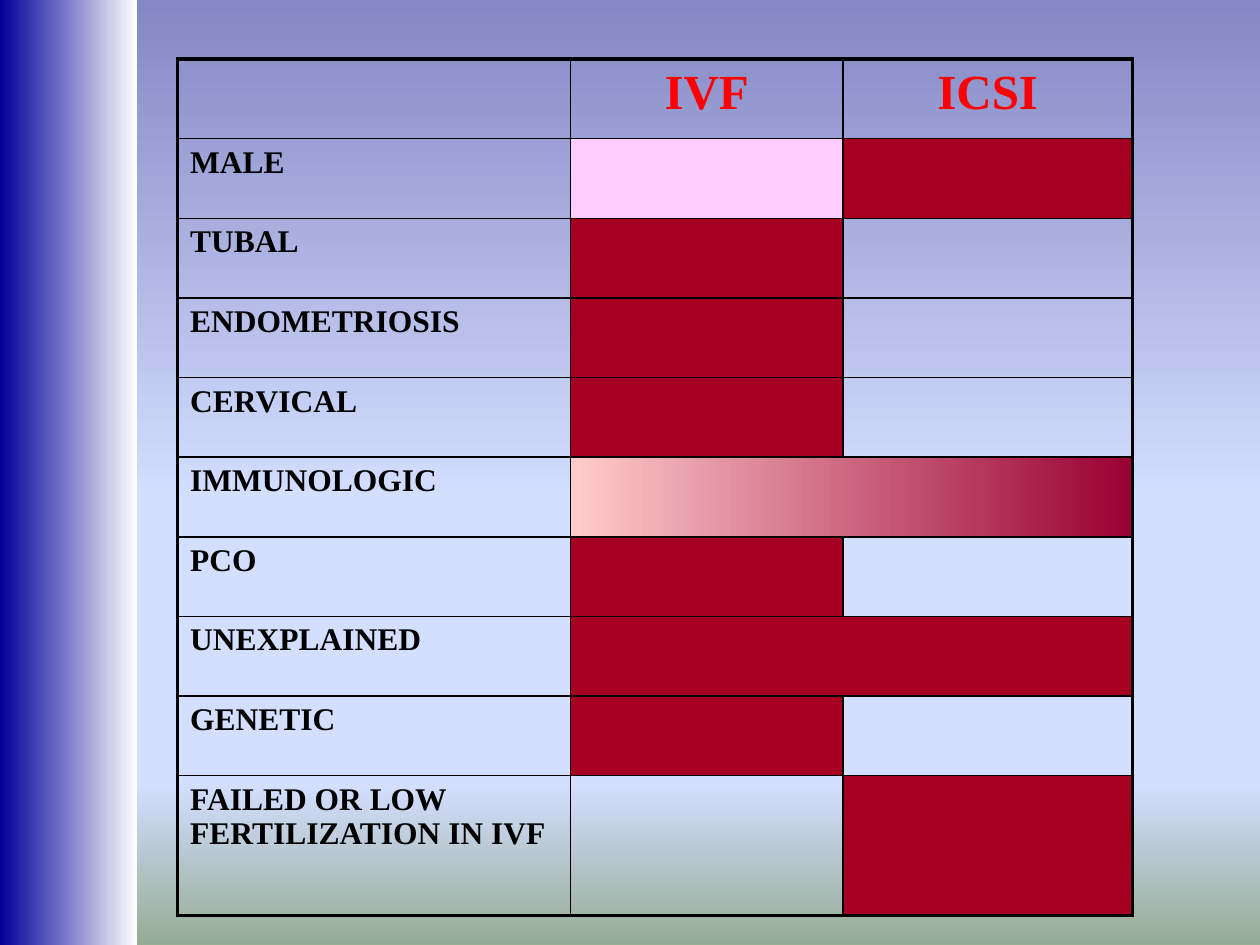
from dataclasses import dataclass

from lxml import etree
from pptx import Presentation
from pptx import util as u
from pptx.dml import color
from pptx.enum import shapes, text
from pptx.oxml import ns


@dataclass(frozen=True)
class Theme:
    font: str = "Times New Roman"
    header_size: float = 28
    label_size: float = 18
    header: str = "FF0000"
    ink: str = "000000"
    strong: str = "A50021"
    weak: str = "FFCCFF"
    blend: tuple = ((0, "FFCCCC"), (100, "990033"))
    band: tuple = ((0, "000099"), (100, "FFFFFF"))
    sky: tuple = ((0, "8488C4"), (53, "D4DEFF"), (83, "D4DEFF"), (100, "96AB94"))
    inner_line: float = 1
    outer_line: float = 2.25


THEME = Theme()
COLUMN_WIDTHS = (224.6, 155.5, 165.6)
ROW_HEIGHT, LAST_ROW_HEIGHT = 45.5, 80
HEADERS = ("", "IVF", "ICSI")

# Cause of infertility, then the IVF and ICSI fills; a single fill spans both
CAUSES = (
    ("MALE", THEME.weak, THEME.strong),
    ("TUBAL", THEME.strong, None),
    ("ENDOMETRIOSIS", THEME.strong, None),
    ("CERVICAL", THEME.strong, None),
    ("IMMUNOLOGIC", THEME.blend),
    ("PCO", THEME.strong, None),
    ("UNEXPLAINED", THEME.strong),
    ("GENETIC", THEME.strong, None),
    ("FAILED OR LOW FERTILIZATION IN IVF", None, THEME.strong),
)


def paint_gradient(fill, element, stops, angle=0):
    fill.gradient()
    fill.gradient_angle = angle
    stop_list = element.find(".//" + ns.qn("a:gsLst"))
    for old in list(stop_list):
        stop_list.remove(old)
    for position, rgb in stops:
        stop = etree.SubElement(stop_list, ns.qn("a:gs"), pos=str(position * 1000))
        etree.SubElement(stop, ns.qn("a:srgbClr"), val=rgb)


def paint_cell(cell, paint):
    if paint is None:
        cell.fill.background()
    elif isinstance(paint, tuple):
        paint_gradient(cell.fill, cell._tc, paint)
    else:
        cell.fill.solid()
        cell.fill.fore_color.rgb = color.RGBColor.from_string(paint)


def draw_borders(cell, outer_sides):
    properties = cell._tc.get_or_add_tcPr()
    for side in "LRTB":
        width = THEME.outer_line if side in outer_sides else THEME.inner_line
        line = etree.SubElement(properties, ns.qn("a:ln" + side), w=str(u.Pt(width)))
        fill = etree.SubElement(line, ns.qn("a:solidFill"))
        etree.SubElement(fill, ns.qn("a:srgbClr"), val=THEME.ink)


def write_cell(cell, words, size, rgb, align):
    para = cell.text_frame.paragraphs[0]
    para.alignment = align
    span = para.add_run()
    span.text = words
    span.font.name = THEME.font
    span.font.size = u.Pt(size)
    span.font.bold = True
    span.font.color.rgb = color.RGBColor.from_string(rgb)


def add_side_band(page, height):
    band = page.shapes.add_shape(
        shapes.MSO_SHAPE.RECTANGLE, 0, 0, u.Pt(78.5), height)
    band.shadow.inherit = False
    band.line.fill.background()
    paint_gradient(band.fill, band.element, THEME.band)


def add_grid(page):
    row_count, column_count = len(CAUSES) + 1, len(HEADERS)
    height = ROW_HEIGHT * len(CAUSES) + LAST_ROW_HEIGHT
    table = page.shapes.add_table(
        row_count, column_count, u.Pt(101.5), u.Pt(33.8),
        u.Pt(sum(COLUMN_WIDTHS)), u.Pt(height)).table
    table.first_row = table.horz_banding = False
    for column, width in zip(table.columns, COLUMN_WIDTHS):
        column.width = u.Pt(width)
    for row in table.rows:
        row.height = u.Pt(ROW_HEIGHT)
    table.rows[row_count - 1].height = u.Pt(LAST_ROW_HEIGHT)

    # Thin inner lines, thick frame
    for r in range(row_count):
        for c in range(column_count):
            edges = {"L": c == 0, "R": c == column_count - 1,
                     "T": r == 0, "B": r == row_count - 1}
            draw_borders(table.cell(r, c), [s for s in edges if edges[s]])
    return table


def fill_grid(table):
    # Header row
    for c, words in enumerate(HEADERS):
        paint_cell(table.cell(0, c), None)
        if words:
            write_cell(table.cell(0, c), words, THEME.header_size,
                       THEME.header, text.PP_ALIGN.CENTER)

    # One row for each cause
    for r, (cause, *paints) in enumerate(CAUSES, start=1):
        paint_cell(table.cell(r, 0), None)
        write_cell(table.cell(r, 0), cause, THEME.label_size,
                   THEME.ink, text.PP_ALIGN.LEFT)
        if len(paints) == 1:
            first, last = table.cell(r, 1), table.cell(r, 2)
            first.merge(last)
            # The frame on the right belongs to the merged cell
            line = first._tc.tcPr.find(ns.qn("a:lnR"))
            line.set("w", str(u.Pt(THEME.outer_line)))
        for c, paint in enumerate(paints, start=1):
            paint_cell(table.cell(r, c), paint)


def main():
    deck = Presentation()
    deck.slide_width, deck.slide_height = u.Pt(720), u.Pt(540)
    page = deck.slides.add_slide(deck.slide_layouts[6])

    # Background and side band
    paint_gradient(page.background.fill, page.element, THEME.sky, angle=270)
    add_side_band(page, deck.slide_height)

    # Treatment table
    fill_grid(add_grid(page))
    deck.save("out.pptx")


if __name__ == "__main__":
    main()
